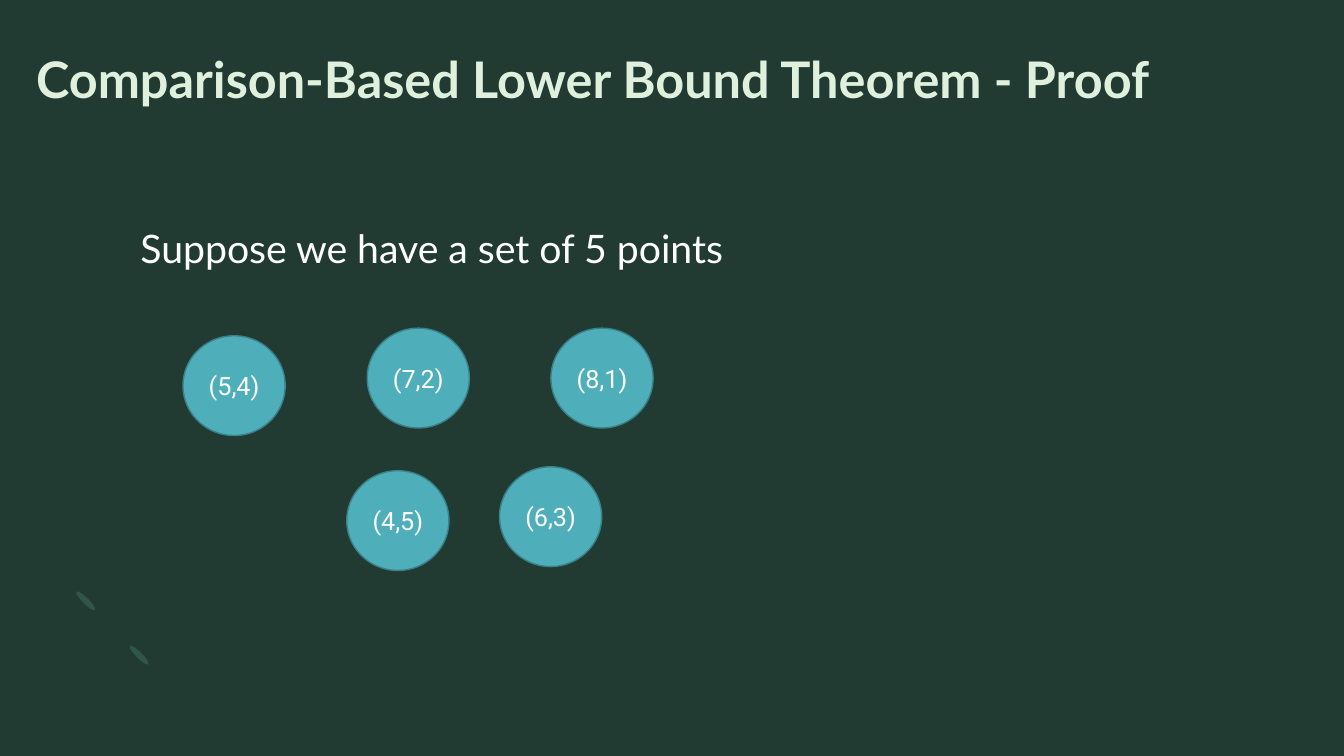
from lxml import etree
from pptx import Presentation
from pptx.dml.color import RGBColor
from pptx.enum import shapes, text
from pptx.oxml import ns
from pptx.util import Pt


def color(code):
    return RGBColor.from_string(code)


def write(frame, words, font, size, ink="FFFFFF", bold=False,
          align=text.PP_ALIGN.CENTER, anchor=text.MSO_ANCHOR.TOP):
    frame.word_wrap = True
    frame.vertical_anchor = anchor
    para = frame.paragraphs[0]
    para.alignment = align
    span = para.add_run()
    span.text = words
    span.font.name = font
    span.font.size = Pt(size)
    span.font.bold = bold
    span.font.color.rgb = color(ink)


deck = Presentation()
deck.slide_width, deck.slide_height = Pt(960), Pt(540)
page = deck.slides.add_slide(deck.slide_layouts[6])
page.background.fill.solid()
page.background.fill.fore_color.rgb = color("213B33")

# Corner ornament: two slim leaves
for left, top in [(97.2, 458.6), (59, 419.8)]:
    leaf = page.shapes.add_shape(
        shapes.MSO_SHAPE.OVAL, Pt(left), Pt(top), Pt(4.3), Pt(18.7))
    leaf.rotation = 135
    leaf.shadow.inherit = False
    leaf.fill.solid()
    leaf.fill.fore_color.rgb = color("30564A")
    leaf.line.fill.background()

# Corner ornament: faint arc, each curve sampled in steps
outer = [[(54.7, 474.5), (40.3, 460.1), (41.8, 435.6), (58.3, 419)]]
inner = [[(71.3, 432), (62.6, 439.9), (61.9, 452.9), (69.1, 459.4)],
         [(69.1, 459.4), (76.3, 466.6), (88.6, 465.8), (97.2, 457.9)]]
closing = [[(109.4, 470.9), (93.6, 486.7), (68.4, 488.9), (54.7, 474.5)]]
steps = 12
outline = []
for curve in outer + inner + closing:
    for step in range(steps + 1):
        t = step / steps
        weights = [(1 - t) ** 3, 3 * t * (1 - t) ** 2, 3 * t ** 2 * (1 - t), t ** 3]
        outline.append(tuple(
            sum(w * point[axis] for w, point in zip(weights, curve))
            for axis in (0, 1)))
builder = page.shapes.build_freeform(*outline[0], scale=float(Pt(1)))
builder.add_line_segments(outline[1:], close=True)
arc = builder.convert_to_shape()
arc.shadow.inherit = False
arc.fill.solid()
arc.fill.fore_color.rgb = color("79B4A2")
arc.line.fill.background()
tint = arc.element.spPr.find(".//" + ns.qn("a:srgbClr"))
etree.SubElement(tint, ns.qn("a:alpha"), val="20000")
effects = arc.element.spPr.find(ns.qn("a:effectLst"))
etree.SubElement(effects, ns.qn("a:softEdge"), rad=str(Pt(9)))

# Points of the set
points = [("(4,5)", 247.7, 336.2), ("(6,3)", 356.8, 333.4),
          ("(5,4)", 130.7, 239.8), ("(8,1)", 393.5, 234.4),
          ("(7,2)", 262.3, 234.4)]
for label, left, top in points:
    circle = page.shapes.add_shape(
        shapes.MSO_SHAPE.OVAL, Pt(left), Pt(top), Pt(73), Pt(71.3))
    circle.shadow.inherit = False
    circle.fill.solid()
    circle.fill.fore_color.rgb = color("4EAFBA")
    circle.line.color.rgb = color("3A818A")
    circle.line.width = Pt(1)
    write(circle.text_frame, label, "Roboto", 18, anchor=text.MSO_ANCHOR.MIDDLE)

# Statement and title
statement = page.shapes.add_textbox(Pt(68.4), Pt(157), Pt(480), Pt(41))
write(statement.text_frame, "Suppose we have a set of 5 points", "Lato", 28)
title = page.shapes.add_textbox(Pt(18.7), Pt(31), Pt(835), Pt(51))
write(title.text_frame, "Comparison-Based Lower Bound Theorem - Proof", "Lato", 36,
      ink="DFF0DC", bold=True, align=text.PP_ALIGN.LEFT)

deck.save("out.pptx")
